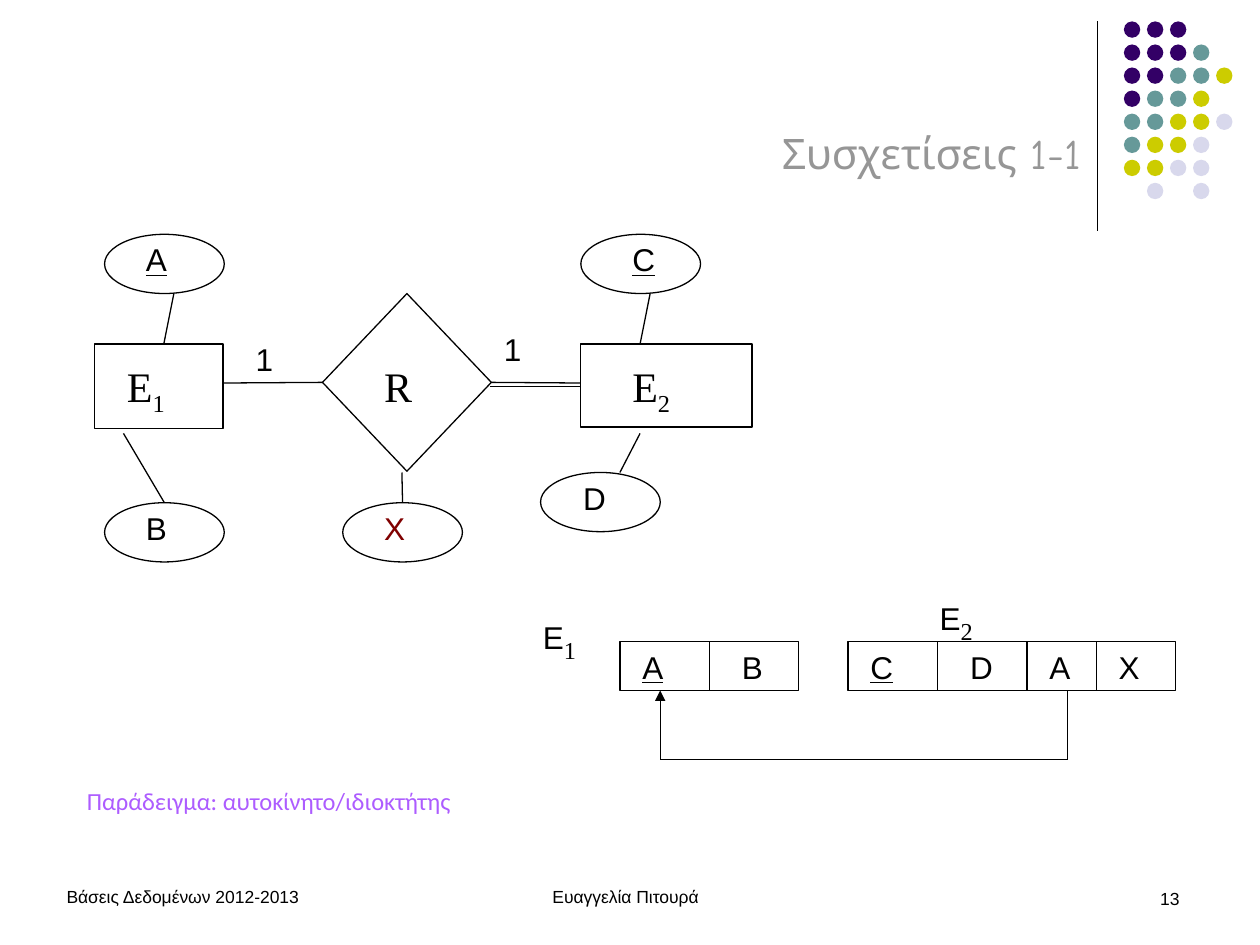
from lxml import etree
from pptx import Presentation
from pptx.dml.color import RGBColor
from pptx.enum.shapes import MSO_CONNECTOR, MSO_SHAPE
from pptx.enum.text import MSO_ANCHOR, PP_ALIGN
from pptx.oxml.ns import qn
from pptx.util import Inches, Pt

LINE = MSO_CONNECTOR.STRAIGHT
OVAL = MSO_SHAPE.OVAL
RECT = MSO_SHAPE.RECTANGLE
PROCESS = MSO_SHAPE.FLOWCHART_PROCESS
CHOICE = MSO_SHAPE.FLOWCHART_DECISION
LEFT, MID, RIGHT = PP_ALIGN.LEFT, PP_ALIGN.CENTER, PP_ALIGN.RIGHT
BLACK = "000000"
SANS, SERIF = "Arial", "Times New Roman"


def hue(code):
    return RGBColor.from_string(code)


def style(run, size, face, tint):
    run.font.size = Pt(size)
    run.font.name = face
    run.font.color.rgb = hue(tint)


deck = Presentation()
deck.slide_width, deck.slide_height = Inches(10), Inches(7.5)
col = deck.slide_width / 100
row = deck.slide_height / 75
slide = deck.slides.add_slide(deck.slide_layouts[5])
shapes = slide.shapes

title = shapes.title
title.left, title.top = int(4.3 * col), int(5.2 * row)
title.width, title.height = int(82.5 * col), int(9.4 * row)
frame = title.text_frame
frame.text = "Συσχετίσεις 1-1"
frame.word_wrap = True
frame.vertical_anchor = MSO_ANCHOR.BOTTOM
frame.paragraphs[0].alignment = RIGHT
style(frame.paragraphs[0].runs[0], 24, "Comic Neue", "969696")

tints = {"p": "330066", "t": "669999", "y": "CCCC00", "g": "D8D8EC"}
dots = ["ppp", "pppt", "pptty", "ptty", "ttyyg", "tyyg", "yygg", " g g"]
for i, marks in enumerate(dots):
    for j, mark in enumerate(marks):
        if mark in tints:
            dot = shapes.add_shape(OVAL, int((89.2 + 1.83 * j) * col), int((1.7 + 1.83 * i) * row),
                                   int(1.3 * col), int(1.3 * row))
            dot.shadow.inherit = False
            dot.fill.solid()
            dot.fill.fore_color.rgb = hue(tints[mark])
            dot.line.fill.background()

nodes = {}
for name, kind, x, y, wide, high in [
    ("E2", PROCESS, 46.1, 27.3, 13.6, 6.6),
    ("R", CHOICE, 25.6, 23.3, 13.4, 14.1),
    ("E1", PROCESS, 7.5, 27.3, 10.2, 6.7),
    ("A", OVAL, 8.3, 18.6, 9.5, 4.7),
    ("B", OVAL, 8.3, 39.9, 9.5, 4.7),
    ("C", OVAL, 46.1, 18.6, 9.5, 4.7),
    ("D", OVAL, 42.9, 37.5, 9.5, 4.7),
    ("X", OVAL, 27.2, 39.9, 9.5, 4.7),
    ("left table", RECT, 49.2, 50.9, 14.2, 3.9),
    ("right table", RECT, 67.3, 50.9, 26, 3.9),
]:
    node = shapes.add_shape(kind, int(x * col), int(y * row), int(wide * col), int(high * row))
    node.shadow.inherit = False
    node.fill.background()
    node.line.color.rgb = hue(BLACK)
    node.line.width = Pt(0.75)
    nodes[name] = node

links = [
    (87.1, 1.7, 87.1, 18.3, None, None),
    (17.7, 30.4, 25.6, 30.4, None, ("R", 1)),
    (39, 30.4, 46.1, 30.4, ("R", 3), None),
    (38.9, 30.7, 46, 30.7, None, None),
    (13.8, 23.3, 13, 27.3, None, None),
    (9.8, 34.4, 13, 39.9, None, ("B", 0)),
    (51.6, 23.3, 50.8, 27.3, None, None),
    (50.8, 34.4, 49.2, 37.5, None, None),
    (31.9, 37.5, 31.9, 39.9, None, ("X", 0)),
    (84.7, 54.8, 84.7, 60.3, None, None),
    (84.7, 60.3, 52.4, 60.3, None, None),
    (52.4, 60.3, 52.4, 54.8, None, None),
]
links[-3:-3] = [(x, 50.9, x, 54.8, None, None) for x in (56.3, 74.4, 81.5, 87)]
for x, y, u, v, start, stop in links:
    link = shapes.add_connector(LINE, int(x * col), int(y * row), int(u * col), int(v * row))
    if start:
        link.begin_connect(nodes[start[0]], start[1])
    if stop:
        link.end_connect(nodes[stop[0]], stop[1])
    link.line.color.rgb = hue(BLACK)
    link.line.width = Pt(0.75)
    etree.SubElement(link._element.spPr, qn("a:effectLst"))
etree.SubElement(link.line._get_or_add_ln(), qn("a:tailEnd"), type="triangle")

big, mid, small = (24, SERIF, BLACK), (18, SANS, BLACK), (10, SANS, BLACK)
for text, sub, x, y, wide, high, look, line, side in [
    ("E", "1", 9.1, 28.1, 9.4, 5, big, False, LEFT),
    ("R", "", 29.5, 28.1, 14.2, 5, big, False, LEFT),
    ("E", "2", 49.2, 28.1, 11, 5, big, False, LEFT),
    ("A", "", 10.6, 18.6, 7.9, 4, mid, True, LEFT),
    ("B", "", 10.6, 39.9, 5.5, 4, mid, False, LEFT),
    ("C", "", 49.2, 18.6, 7.1, 4, mid, True, LEFT),
    ("D", "", 45.3, 37.5, 7.1, 4, mid, False, LEFT),
    ("X", "", 29.5, 39.9, 6.3, 4, (18, SANS, "800000"), False, LEFT),
    ("1", "", 19.3, 26.5, 6.3, 4, mid, False, LEFT),
    ("1", "", 39, 25.7, 4.7, 4, mid, False, LEFT),
    ("E", "1", 42.1, 47.7, 11, 4, mid, False, LEFT),
    ("E", "2", 73.6, 46.2, 11, 4, mid, False, LEFT),
    ("A", "", 50, 50.9, 5.5, 4, mid, True, LEFT),
    ("B", "", 57.9, 50.9, 7.1, 4, mid, False, LEFT),
    ("C", "", 68.1, 50.9, 5.5, 4, mid, True, LEFT),
    ("D", "", 76, 50.9, 7.1, 4, mid, False, LEFT),
    ("A", "", 82.3, 50.9, 4.7, 4, mid, False, LEFT),
    ("X", "", 87.8, 50.9, 4.7, 4, mid, False, LEFT),
    ("Παράδειγμα: αυτοκίνητο/ιδιοκτήτης", "", 5.9, 61.9, 42.2, 3.4,
     (14, "Calibri", "AD5CFF"), False, LEFT),
    ("Βάσεις Δεδομένων 2012-2013", "", 4.3, 69.8, 26, 3.2, small, False, LEFT),
    ("Ευαγγελία Πιτουρά", "", 33.5, 69.8, 32.3, 2.2, small, False, MID),
    ("13", "", 71.3, 70, 23.3, 5, small, False, RIGHT),
]:
    box = shapes.add_textbox(int(x * col), int(y * row), int(wide * col), int(high * row))
    frame = box.text_frame
    frame.word_wrap = True
    frame.text = text
    para = frame.paragraphs[0]
    para.alignment = side
    style(para.runs[0], *look)
    if line:
        para.runs[0].font.underline = True
    if sub:
        run = para.add_run()
        run.text = sub
        style(run, *big)
        run.font._element.set("baseline", "-25000")

deck.save("out.pptx")
